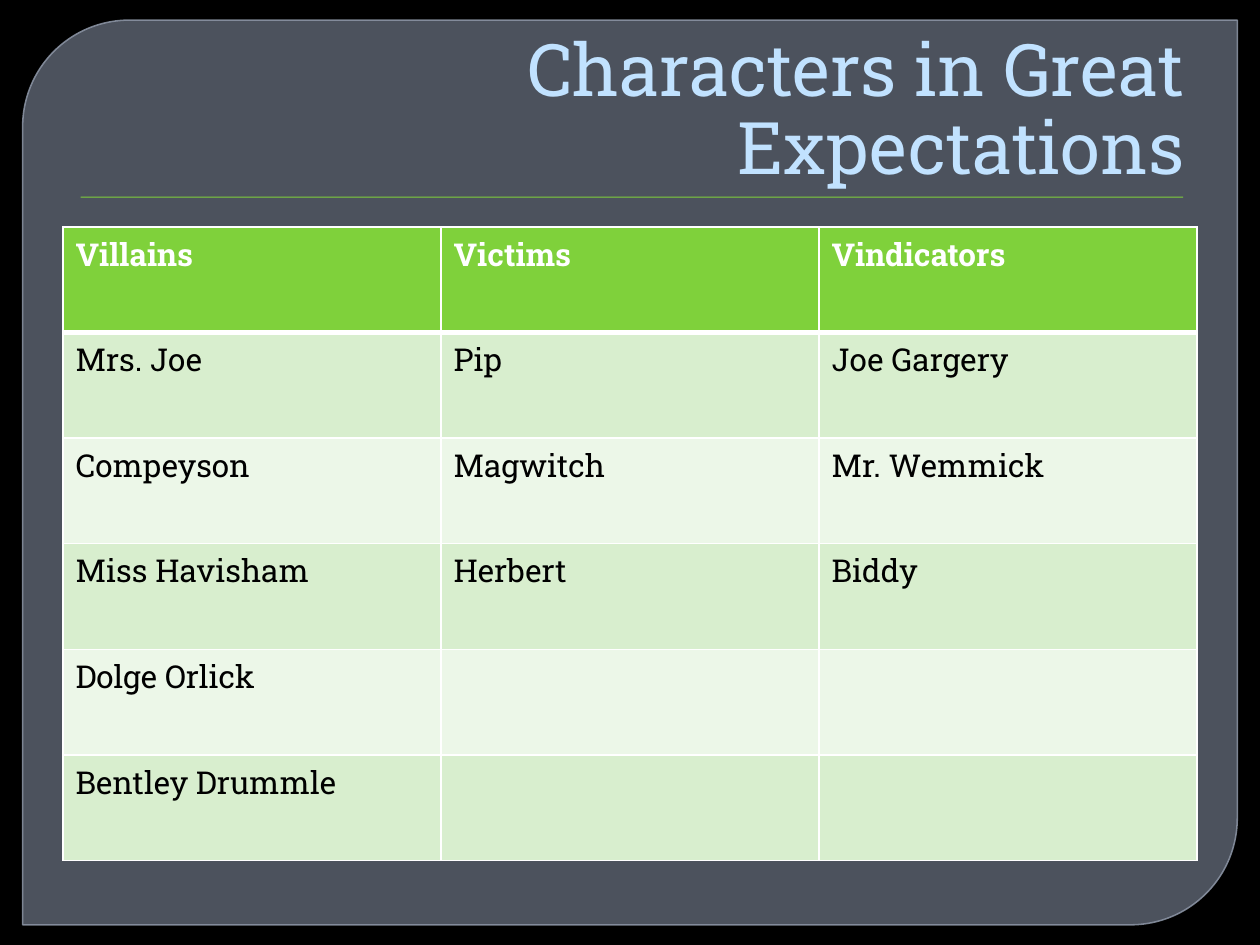
from lxml.etree import SubElement
from pptx import Presentation
from pptx.dml.color import RGBColor
from pptx.enum.shapes import MSO_SHAPE as Shape
from pptx.enum.text import MSO_ANCHOR as Anchor, PP_ALIGN as Align
from pptx.oxml import parse_xml
from pptx.oxml.ns import nsdecls, qn
from pptx.util import Inches, Pt

FONT = "Roboto Slab"
GREEN = "7FD13B"
WHITE = "FFFFFF"
BANDS = ("D8EECE", "ECF7E8")
ROWS = [
    ("Villains", "Victims", "Vindicators"),
    ("Mrs. Joe", "Pip", "Joe Gargery"),
    ("Compeyson", "Magwitch", "Mr. Wemmick"),
    ("Miss Havisham", "Herbert", "Biddy"),
    ("Dolge Orlick", "", ""),
    ("Bentley Drummle", "", ""),
]


def paint(fill, color, alpha=None):
    """Fill with a solid colour, optionally with an opacity in percent."""
    fill.solid()
    fill.fore_color.rgb = RGBColor.from_string(color)
    if alpha is not None:
        # The fill's own XML holds the colour that takes the alpha
        solid = fill._xPr.find(qn("a:solidFill"))
        SubElement(solid[0], qn("a:alpha"), val=str(alpha * 1000))


def style(para, size, color, bold=False):
    font = para.font
    font.name, font.size, font.bold = FONT, Pt(size), bold
    font.color.rgb = RGBColor.from_string(color)


def add_panel(page):
    panel = page.shapes.add_shape(Shape.ROUND_2_DIAG_RECTANGLE, Inches(0.18),
                                  Inches(0.16), Inches(9.64), Inches(7.18))
    panel.adjustments[0] = 0.118
    panel.adjustments[1] = 0
    panel.shadow.inherit = False
    paint(panel.fill, "767F8F", 65)
    panel.line.width = Pt(0.87)
    paint(panel.line.fill, "8B94A4", 88)


def add_rule(page):
    rule = page.shapes.add_shape(Shape.RECTANGLE, Inches(0.64), Inches(1.56),
                                 Inches(8.75), Inches(0.01))
    paint(rule.fill, GREEN)
    rule.line.fill.background()
    rule._element.spPr.append(parse_xml(
        f'<a:effectLst {nsdecls("a")}><a:outerShdw blurRad="12700" dist="12700" '
        'dir="5400000"><a:srgbClr val="000000"><a:alpha val="75000"/></a:srgbClr>'
        '</a:outerShdw></a:effectLst>'))


def add_title(page, text):
    box = page.shapes.add_textbox(Inches(0.5), Inches(0.28), Inches(9), Inches(1.25))
    frame = box.text_frame
    frame.word_wrap = True
    frame.vertical_anchor = Anchor.BOTTOM
    frame.margin_bottom = Inches(0.02)
    para = frame.paragraphs[0]
    para.text = text
    para.alignment = Align.RIGHT
    para.line_spacing = 0.9
    style(para, 41.4, "C1E2FF")


def add_border(cell, side, width):
    cell._tc.get_or_add_tcPr().append(parse_xml(
        f'<a:ln{side} {nsdecls("a")} w="{Pt(width)}"><a:solidFill>'
        f'<a:srgbClr val="{WHITE}"/></a:solidFill></a:ln{side}>'))


def add_character_table(page):
    table = page.shapes.add_table(len(ROWS), len(ROWS[0]), Inches(0.5), Inches(1.8),
                                  Inches(9), Inches(5.03)).table
    for row, names in enumerate(ROWS):
        header = row == 0
        for column, name in enumerate(names):
            cell = table.cell(row, column)
            # Thick line between the header and the body
            widths = {"L": 1, "R": 1, "T": 3 if row == 1 else 1, "B": 3 if header else 1}
            for side, width in widths.items():
                add_border(cell, side, width)
            paint(cell.fill, GREEN if header else BANDS[(row - 1) % 2])
            para = cell.text_frame.paragraphs[0]
            para.text = name
            style(para, 18, WHITE if header else "000000", header)


def main():
    deck = Presentation()
    deck.slide_width, deck.slide_height = Inches(10), Inches(7.5)
    page = deck.slides.add_slide(deck.slide_layouts[6])
    paint(page.background.fill, "000000")
    add_panel(page)
    add_rule(page)
    add_title(page, "Characters in Great Expectations")
    add_character_table(page)
    deck.save("out.pptx")


if __name__ == "__main__":
    main()
